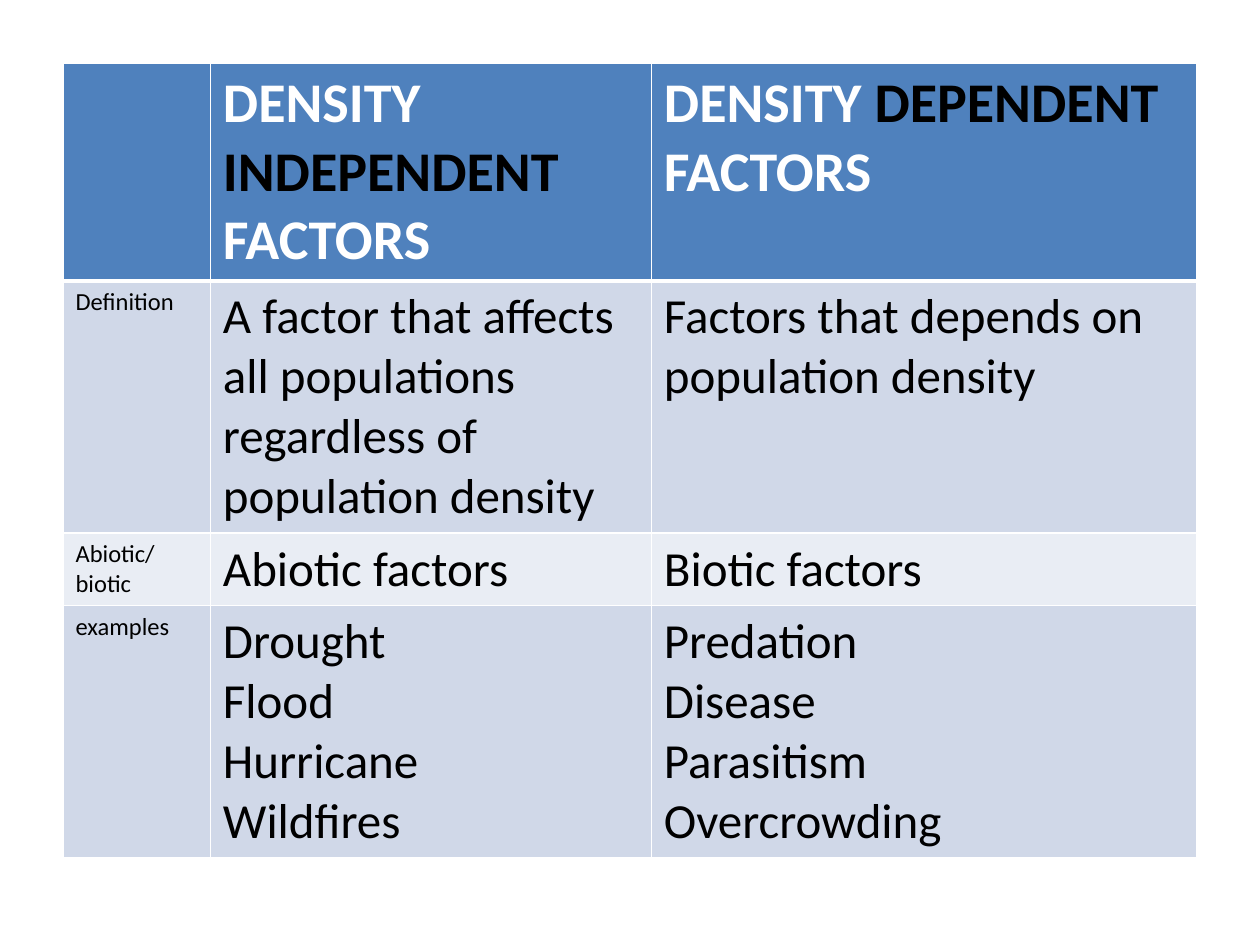
import pptx
import pptx.dml.color
import pptx.oxml
import pptx.oxml.ns
import pptx.util

RGBColor = pptx.dml.color.RGBColor
WHITE = RGBColor(0xFF, 0xFF, 0xFF)
BLACK = RGBColor(0x00, 0x00, 0x00)
HEADER_BLUE = RGBColor(0x4F, 0x81, 0xBD)
BAND_DARK = RGBColor(0xD0, 0xD8, 0xE8)
BAND_LIGHT = RGBColor(0xE9, 0xED, 0xF4)

HEADER = {"size": pptx.util.Pt(32), "bold": True, "color": WHITE}
HEADER_KEY = {**HEADER, "color": BLACK}
LABEL = {"size": pptx.util.Pt(14), "bold": False, "color": BLACK}
BODY = {**LABEL, "size": pptx.util.Pt(28)}

GRID_COLUMNS, GRID_ROWS = 20, 15
COLUMN_SPANS = [2.34, 7, 8.66]
MINIMUM_ROW_SPAN = 0.82  # rows grow to fit their text
TABLE_ROW_SPAN = 12.4

HEADINGS = ["INDEPENDENT", "DEPENDENT"]
BODY_ROWS = [
    (["Definition"],
     ["A factor that affects all populations regardless of population density"],
     ["Factors that depends on population density"]),
    (["Abiotic/", "biotic"], ["Abiotic factors"], ["Biotic factors"]),
    (["examples"],
     ["Drought", "Flood", "Hurricane", "Wildfires"],
     ["Predation", "Disease", "Parasitism", "Overcrowding"]),
]


class SlideBuilder:
    """Holds the font, the grid and the current slide."""

    font_name = "Calibri"

    def __init__(self, deck):
        self.column = deck.slide_width / GRID_COLUMNS
        self.row = deck.slide_height / GRID_ROWS
        self.slide = deck.slides.add_slide(deck.slide_layouts[6])

    def add_table(self, left, top, column_spans, row_count, row_span, height):
        """Add a table measured in grid columns and rows."""
        frame = self.slide.shapes.add_table(
            row_count, len(column_spans),
            int(left * self.column), int(top * self.row),
            int(sum(column_spans) * self.column), int(height * self.row))
        for column, span in zip(frame.table.columns, column_spans):
            column.width = int(span * self.column)
        for row in frame.table.rows:
            row.height = int(row_span * self.row)
        frame.height = int(height * self.row)
        return frame.table

    def fill_cell(self, cell, paragraphs, color, top=1, bottom=1):
        """Write paragraphs of (text, format) runs; top and bottom are border points."""
        for index, runs in enumerate(paragraphs):
            frame = cell.text_frame
            para = frame.add_paragraph() if index else frame.paragraphs[0]
            for text, style in runs:
                self.add_run(para, text, style)
        self.add_borders(cell, {"L": 1, "R": 1, "T": top, "B": bottom})
        cell.fill.solid()
        cell.fill.fore_color.rgb = color

    def add_run(self, para, text, style):
        span = para.add_run()
        span.text = text
        span.font.name = self.font_name
        for name, value in style.items():
            if name == "color":
                span.font.color.rgb = value
            else:
                setattr(span.font, name, value)

    def add_borders(self, cell, widths):
        properties = cell._tc.get_or_add_tcPr()
        for side, points in widths.items():
            properties.append(pptx.oxml.parse_xml(
                f'<a:ln{side} {pptx.oxml.ns.nsdecls("a")} w="{pptx.util.Pt(points)}">'
                f'<a:solidFill><a:srgbClr val="{WHITE}"/></a:solidFill></a:ln{side}>'))


def main():
    deck = pptx.Presentation()
    deck.slide_width = pptx.util.Inches(10)
    deck.slide_height = pptx.util.Inches(7.5)
    builder = SlideBuilder(deck)
    table = builder.add_table(1, 1, COLUMN_SPANS, len(BODY_ROWS) + 1,
                              MINIMUM_ROW_SPAN, TABLE_ROW_SPAN)

    builder.fill_cell(table.cell(0, 0), [], HEADER_BLUE, bottom=3)
    for column, heading in enumerate(HEADINGS, 1):
        runs = [("DENSITY ", HEADER), (heading, HEADER_KEY), (" FACTORS", HEADER)]
        builder.fill_cell(table.cell(0, column), [runs], HEADER_BLUE, bottom=3)

    for row, texts in enumerate(BODY_ROWS, 1):
        color = BAND_DARK if row % 2 else BAND_LIGHT
        for column, lines in enumerate(texts):
            style = BODY if column else LABEL
            paragraphs = [[(line, style)] for line in lines]
            builder.fill_cell(table.cell(row, column), paragraphs, color,
                              top=3 if row == 1 else 1)

    deck.save("out.pptx")


if __name__ == "__main__":
    main()
